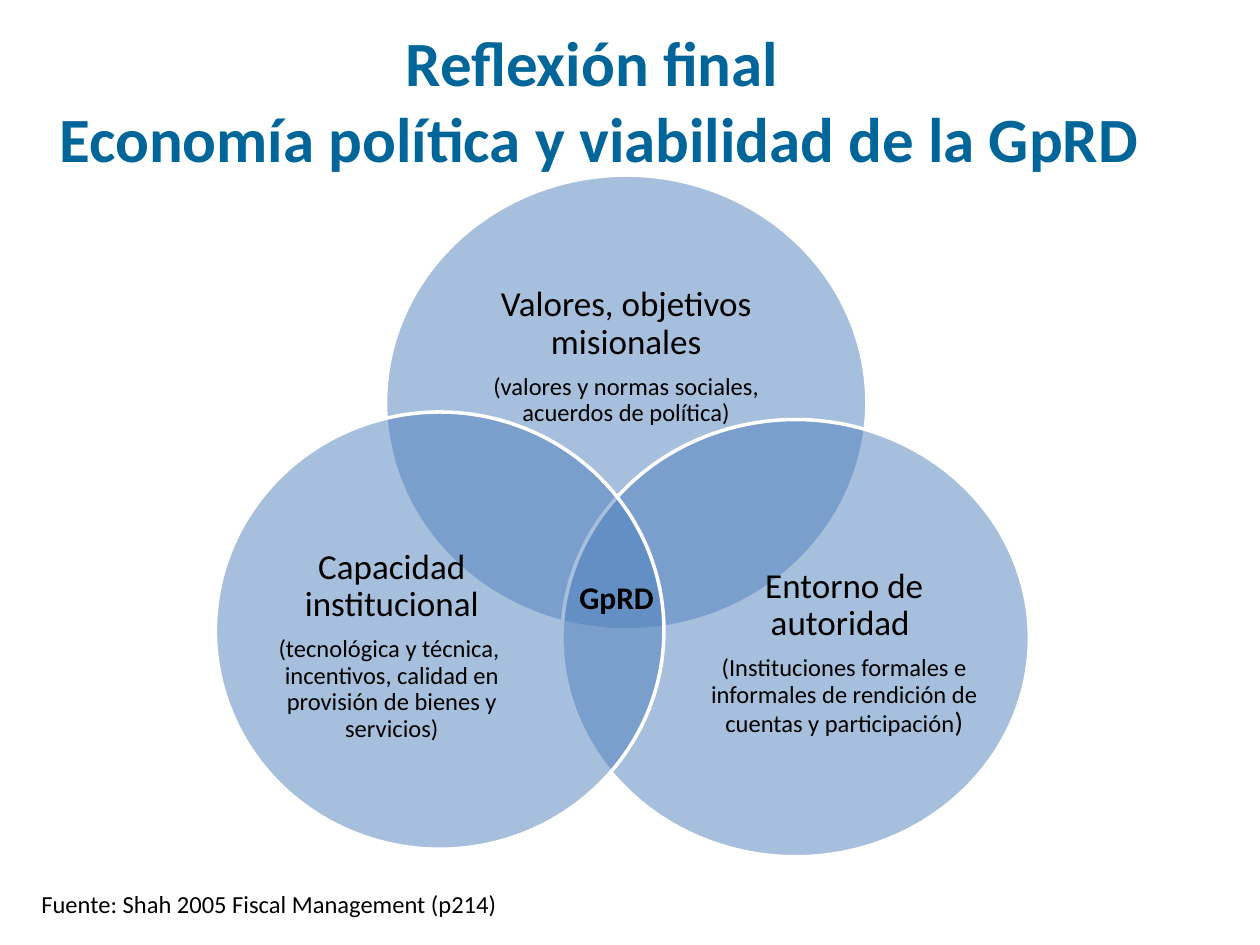
from dataclasses import dataclass

from lxml import etree
from pptx import Presentation
from pptx.dml.color import RGBColor
from pptx.enum.shapes import MSO_SHAPE
from pptx.enum.text import MSO_ANCHOR, MSO_AUTO_SIZE, PP_ALIGN
from pptx.oxml.ns import qn
from pptx.util import Inches, Pt

OVAL = MSO_SHAPE.OVAL
MIDDLE, TOP = MSO_ANCHOR.MIDDLE, MSO_ANCHOR.TOP
CENTER, LEFT = PP_ALIGN.CENTER, PP_ALIGN.LEFT
FIT_SHAPE = MSO_AUTO_SIZE.SHAPE_TO_FIT_TEXT

TEAL = RGBColor(0x00, 0x66, 0x99)
BLUE = RGBColor(0x4F, 0x81, 0xBD)
WHITE = RGBColor(0xFF, 0xFF, 0xFF)
BLACK = RGBColor(0x00, 0x00, 0x00)
FONT = "Calibri"
HEADING_SIZE, DETAIL_SIZE = 20, 14
SPACE_RATIO = 0.35


@dataclass(frozen=True)
class Box:
    left: float
    top: float
    width: float
    height: float

    def lengths(self) -> tuple:
        return tuple(Inches(v) for v in (self.left, self.top, self.width, self.height))


@dataclass(frozen=True)
class Circle:
    outline: Box
    label: Box
    heading: str
    detail: str
    closing: str = ""


CIRCLES = (
    Circle(Box(3.06, 1.39, 3.82, 3.61), Box(3.57, 2.02, 2.8, 1.62),
           "Valores, objetivos misionales",
           "(valores y normas sociales, acuerdos de política)"),
    Circle(Box(4.46, 3.33, 3.71, 3.47), Box(5.59, 4.23, 2.22, 1.91),
           "Entorno de autoridad ",
           "(Instituciones formales e informales de rendición de cuentas y participación",
           ")"),
    Circle(Box(1.71, 3.27, 3.56, 3.47), Box(2.04, 4.17, 2.14, 1.91),
           "Capacidad institucional",
           "(tecnológica y técnica,  incentivos, calidad en provisión de bienes y servicios)"),
)


def style_run(run, size: float, color: RGBColor = BLACK, bold: bool = False) -> None:
    run.font.name = FONT
    run.font.size = Pt(size)
    run.font.bold = bold
    run.font.color.rgb = color


def add_text(slide, box: Box, lines: tuple, sizes: tuple, color: RGBColor = BLACK,
             bold: bool = False, align=CENTER, anchor=MIDDLE, wrap: bool = True):
    frame = slide.shapes.add_textbox(*box.lengths()).text_frame
    frame.word_wrap = wrap
    frame.vertical_anchor = anchor
    if not wrap:
        frame.auto_size = FIT_SHAPE
    frame.text = "\n".join(lines)
    for paragraph, size in zip(frame.paragraphs, sizes):
        paragraph.alignment = align
        style_run(paragraph.runs[0], size, color, bold)
    return frame


def add_circle(slide, circle: Circle) -> None:
    oval = slide.shapes.add_shape(OVAL, *circle.outline.lengths())
    oval.shadow.inherit = False
    oval.fill.solid()
    oval.fill.fore_color.rgb = BLUE
    fill_color = oval.fill._xPr.find(qn("a:solidFill"))[0]
    etree.SubElement(fill_color, qn("a:alpha")).set("val", "50000")
    oval.line.color.rgb = WHITE
    oval.line.width = Pt(2)

    sizes = (HEADING_SIZE, DETAIL_SIZE)
    frame = add_text(slide, circle.label, (circle.heading, circle.detail), sizes)
    frame.margin_left = frame.margin_right = frame.margin_top = frame.margin_bottom = 0
    for paragraph, size in zip(frame.paragraphs, sizes):
        paragraph.line_spacing = 0.9
        paragraph.space_after = Pt(round(size * SPACE_RATIO))
    if circle.closing:
        closing = frame.paragraphs[-1].add_run()
        closing.text = circle.closing
        style_run(closing, 16)


def main() -> None:
    presentation = Presentation()
    presentation.slide_width = Inches(10)
    presentation.slide_height = Inches(7.5)
    slide = presentation.slides.add_slide(presentation.slide_layouts[6])

    add_text(slide, Box(0.1, 0.36, 9.31, 0.86),
             ("Reflexión final ", "Economía política y viabilidad de la GpRD"),
             (36, 36), color=TEAL, bold=True)
    for circle in CIRCLES:
        add_circle(slide, circle)
    add_text(slide, Box(0.23, 7.01, 3.85, 0.34),
             ("Fuente: Shah 2005 Fiscal Management (p214)",), (14,),
             align=LEFT, anchor=TOP, wrap=False)
    add_text(slide, Box(4.5, 4.54, 0.8, 0.4), ("GpRD",), (18,),
             bold=True, align=LEFT, anchor=TOP, wrap=False)

    presentation.save("out.pptx")


if __name__ == "__main__":
    main()
